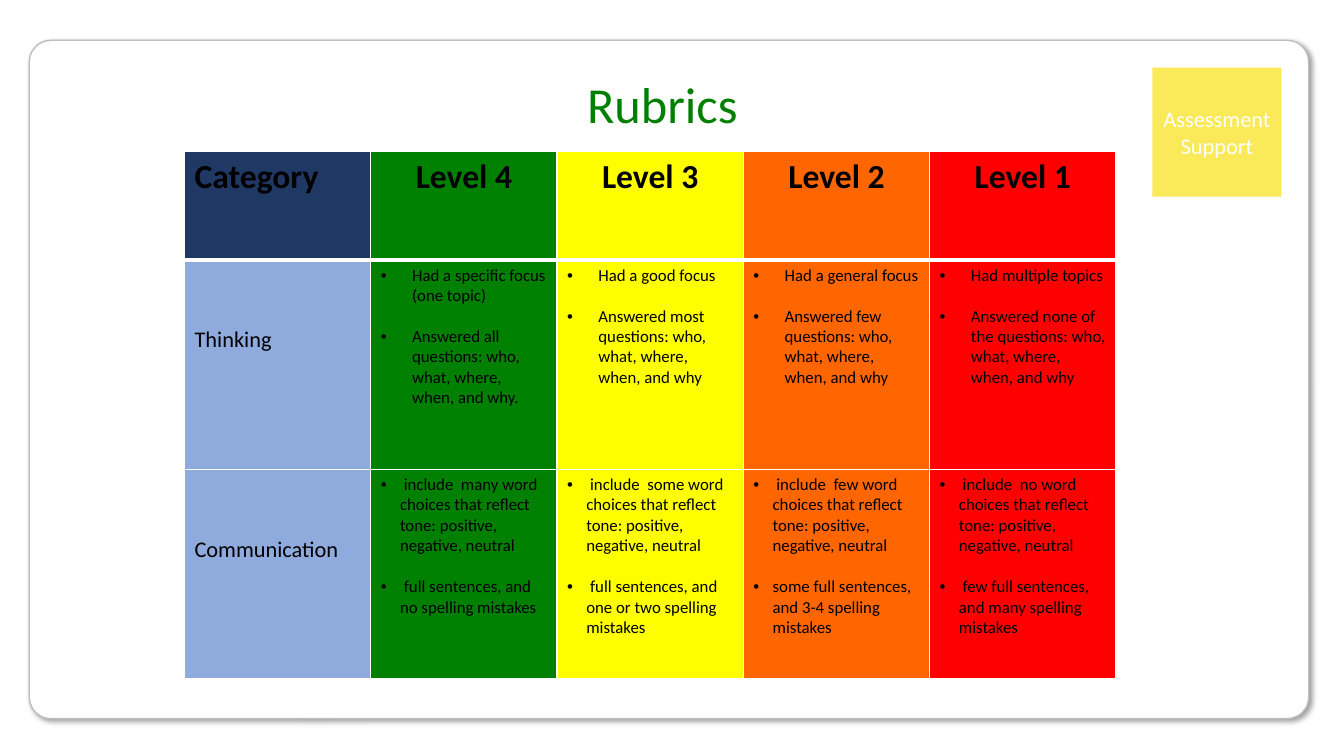
from lxml.etree import SubElement
from pptx import Presentation
from pptx.dml.color import RGBColor
from pptx.enum.shapes import MSO_SHAPE
from pptx.enum.text import MSO_ANCHOR, PP_ALIGN
from pptx.oxml import parse_xml
from pptx.oxml.ns import nsdecls, qn
from pptx.util import Inches, Pt

COLORS = {
    "white": "FFFFFF", "black": "000000", "frame": "BFBFBF", "badge": "FAE959",
    "navy": "203864", "label": "8FAADC", "green": "008000",
    "yellow": "FFFF00", "orange": "FF6600", "red": "FF0000",
}
LEVELS = [("Level 4", "green"), ("Level 3", "yellow"), ("Level 2", "orange"), ("Level 1", "red")]
TONE = "choices that reflect tone: positive, negative, neutral"
CRITERIA = [
    ("Thinking", 0.31, [
        ("Had a specific focus (one topic)",
         "Answered all questions: who, what, where, when, and why."),
        ("Had a good focus",
         "Answered most questions: who, what, where, when, and why"),
        ("Had a general focus",
         "Answered few questions: who, what, where, when, and why"),
        ("Had multiple topics",
         "Answered none of the questions: who, what, where, when, and why"),
    ]),
    ("Communication", 0.19, [
        (f" include  many word {TONE}", " full sentences, and no spelling mistakes"),
        (f" include  some word {TONE}", " full sentences, and one or two spelling mistakes"),
        (f" include  few word {TONE}", "some full sentences, and 3-4 spelling mistakes"),
        (f" include  no word {TONE}", " few full sentences, and many spelling mistakes"),
    ]),
]


def rgb(name):
    """Return the named palette colour."""
    return RGBColor.from_string(COLORS[name])


def write(paragraph, text, size, color="black", bold=False, align=PP_ALIGN.LEFT):
    """Add one formatted run to a paragraph."""
    paragraph.alignment = align
    run = paragraph.add_run()
    run.text = text
    run.font.name = "Calibri"
    run.font.size = Pt(size)
    run.font.bold = bold
    run.font.color.rgb = rgb(color)


def add_frame(slide, left, top, width, height):
    """Draw the rounded page frame with its soft shadow."""
    shape = slide.shapes.add_shape(MSO_SHAPE.ROUNDED_RECTANGLE, left, top, width, height)
    shape.adjustments[0] = 0.032
    shape.fill.solid()
    shape.fill.fore_color.rgb = rgb("white")
    shape.line.color.rgb = rgb("frame")
    shape.line.width = Pt(1)
    shape._element.spPr.append(parse_xml(
        f'<a:effectLst {nsdecls("a")}><a:outerShdw blurRad="{Pt(4)}" dist="{Pt(3)}" '
        f'dir="2700000" algn="tl" rotWithShape="0"><a:srgbClr val="{COLORS["black"]}">'
        '<a:alpha val="40000"/></a:srgbClr></a:outerShdw></a:effectLst>'))


def add_badge(slide, left, top, size):
    """Draw the square section badge."""
    shape = slide.shapes.add_shape(MSO_SHAPE.RECTANGLE, left, top, size, size)
    shape.shadow.inherit = False
    shape.fill.solid()
    shape.fill.fore_color.rgb = rgb("badge")
    shape.line.fill.background()
    frame = shape.text_frame
    frame.word_wrap = True
    frame.vertical_anchor = MSO_ANCHOR.MIDDLE
    write(frame.paragraphs[0], "Assessment Support", 16, "white", align=PP_ALIGN.CENTER)


def add_title(slide, left, top, width, height):
    """Write the centred slide title."""
    frame = slide.shapes.add_textbox(left, top, width, height).text_frame
    frame.word_wrap = True
    write(frame.paragraphs[0], "Rubrics", 36, "green", align=PP_ALIGN.CENTER)


def style_cell(cell, fill, top=1, bottom=1):
    """Give a cell white borders and a solid fill."""
    properties = cell._tc.get_or_add_tcPr()
    for edge, width in (("L", 1), ("R", 1), ("T", top), ("B", bottom)):
        line = SubElement(properties, qn(f"a:ln{edge}"), w=str(Pt(width)))
        solid = SubElement(line, qn("a:solidFill"))
        SubElement(solid, qn("a:srgbClr"), val=COLORS["white"])
    cell.fill.solid()
    cell.fill.fore_color.rgb = rgb(fill)


def write_bullets(cell, items, indent):
    """Fill a cell with bullets set one line apart."""
    frame = cell.text_frame
    for index, item in enumerate(items):
        paragraph = frame.add_paragraph() if index else frame.paragraphs[0]
        properties = paragraph._p.get_or_add_pPr()
        properties.set("marL", str(Inches(indent)))
        properties.set("indent", str(-Inches(indent)))
        SubElement(properties, qn("a:buFont"), typeface="Arial")
        SubElement(properties, qn("a:buChar"), char="•")
        if index:
            paragraph.space_before = Pt(14.65)
        write(paragraph, item, 12)


def add_rubric(slide, left, top, width, height):
    """Build the rubric table of criteria by level."""
    table = slide.shapes.add_table(
        len(CRITERIA) + 1, len(LEVELS) + 1, left, top, width, height).table
    header_height = Inches(1.08)
    for column in table.columns:
        column.width = width // len(table.columns)
    for index, row in enumerate(table.rows):
        row.height = (height - header_height) // len(CRITERIA) if index else header_height

    for column, (text, fill) in enumerate([("Category", "navy")] + LEVELS):
        cell = table.cell(0, column)
        style_cell(cell, fill, bottom=3)
        align = PP_ALIGN.CENTER if column else PP_ALIGN.LEFT
        write(cell.text_frame.paragraphs[0], text, 24, bold=True, align=align)

    for row, (name, indent, descriptions) in enumerate(CRITERIA, 1):
        top_width = 3 if row == 1 else 1
        label = table.cell(row, 0)
        style_cell(label, "label", top=top_width)
        label.margin_top = Inches(0.66)
        write(label.text_frame.paragraphs[0], name, 16)
        for column, (items, level) in enumerate(zip(descriptions, LEVELS), 1):
            cell = table.cell(row, column)
            style_cell(cell, level[1], top=top_width)
            write_bullets(cell, items, indent)


def main():
    """Build and save the rubric slide."""
    presentation = Presentation()
    presentation.slide_width = Inches(13.33)
    presentation.slide_height = Inches(7.5)
    slide = presentation.slides.add_slide(presentation.slide_layouts[6])
    add_frame(slide, Inches(0.29), Inches(0.4), Inches(12.69), Inches(6.73))
    add_badge(slide, Inches(11.43), Inches(0.67), Inches(1.28))
    add_rubric(slide, Inches(1.83), Inches(1.5), Inches(9.24), Inches(5.23))
    add_title(slide, Inches(2.3), Inches(0.68), Inches(8.54), Inches(0.71))
    presentation.save("out.pptx")


if __name__ == "__main__":
    main()
